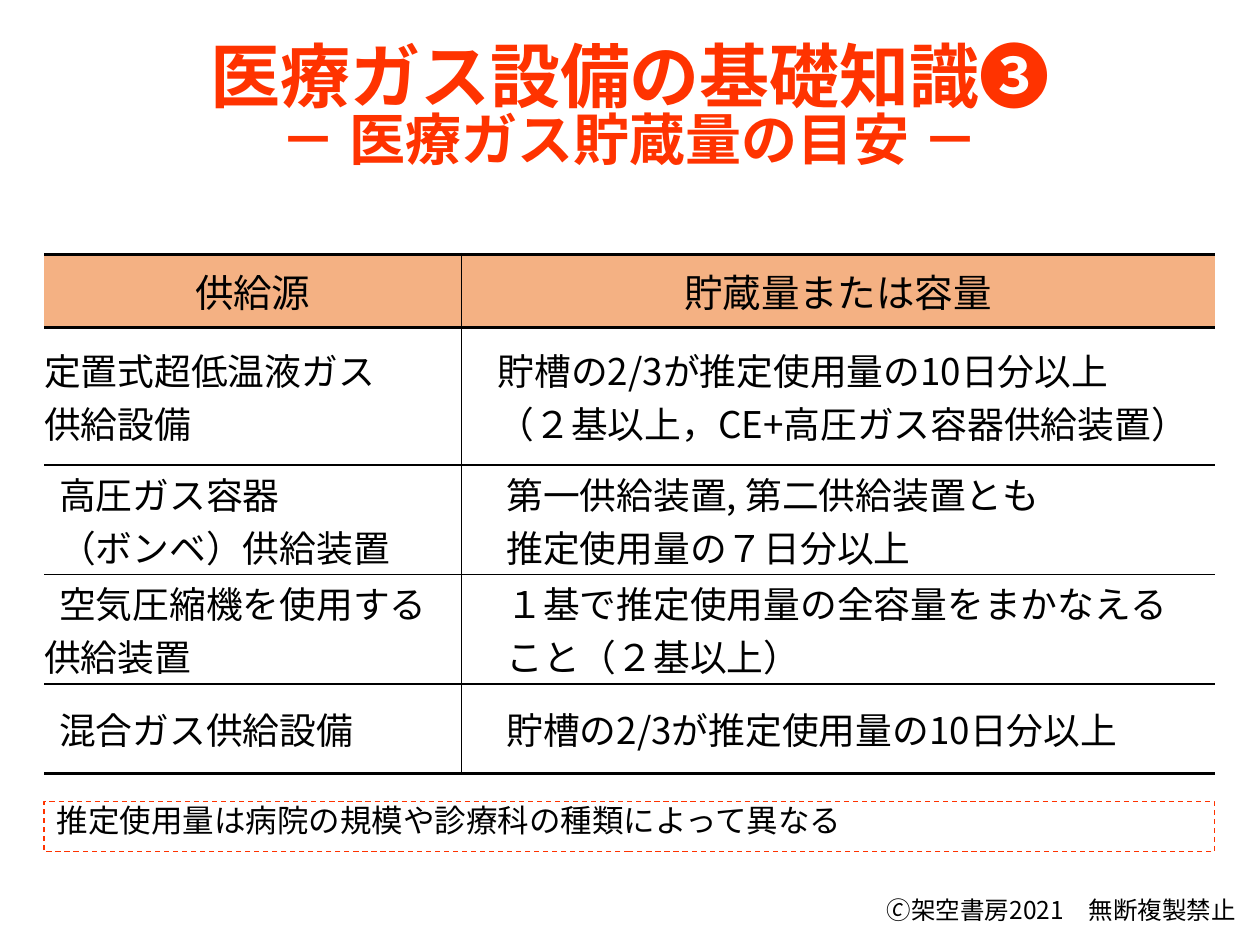
from lxml.etree import SubElement
from pptx import Presentation
from pptx.dml.color import RGBColor
from pptx.enum.dml import MSO_LINE
from pptx.enum.lang import MSO_LANGUAGE_ID
from pptx.enum.shapes import MSO_SHAPE
from pptx.enum.text import MSO_ANCHOR, MSO_AUTO_SIZE, PP_ALIGN
from pptx.oxml.ns import qn
from pptx.util import Inches, Pt

FONT = "Noto Sans CJK JP"
BLACK, RED, ORANGE = "000000", "FF3300", "F4B183"
COLUMNS = [3.31, 5.98]
ROWS = [0.58, 1.09, 0.87, 0.87, 0.71]
RULES = [2.25, 1.5, 1, 1, 1, 2.25]
HEADINGS = ["供給源", "貯蔵量または容量"]
SUPPLIES = [
    ([("定置式超低温液ガス", 0), ("供給設備", 0)],
     [("貯槽の2/3が推定使用量の10日分以上", 0.29),
      ("（２基以上，CE+高圧ガス容器供給装置）", 0.29)]),
    ([("高圧ガス容器", 0.12), ("（ボンベ）供給装置", 0.12)],
     [("第一供給装置, 第二供給装置とも", 0.36),
      ("推定使用量の７日分以上", 0.36)]),
    ([("空気圧縮機を使用する", 0.12), ("供給装置", 0)],
     [("１基で推定使用量の全容量をまかなえる", 0.36),
      ("こと（２基以上）", 0.36)]),
    ([("混合ガス供給設備", 0.12)],
     [("貯槽の2/3が推定使用量の10日分以上", 0.36)]),
]


def color(value):
    return RGBColor.from_string(value)


class SlideBuilder:
    """Holds the style and the current slide, and adds each kind of element."""

    def __init__(self, deck):
        self.slide = deck.slides.add_slide(deck.slide_layouts[5])

    def place(self, shape, left, top, width, height):
        shape.left, shape.top = Inches(left), Inches(top)
        shape.width, shape.height = Inches(width), Inches(height)

    def add_lines(self, frame, lines, align=PP_ALIGN.LEFT, ink=BLACK, bold=False, spacing=0.83):
        for index, (text, size, indent) in enumerate(lines):
            para = frame.paragraphs[0] if index == 0 else frame.add_paragraph()
            para.alignment = align
            para.line_spacing = spacing
            para.space_before = Pt(0)
            if indent:
                properties = para._p.get_or_add_pPr()
                properties.set("marL", str(Inches(indent)))
                properties.set("indent", "0")
            span = para.add_run()
            span.text = text
            span.font.name = FONT
            span.font.size = Pt(size)
            span.font.bold = bold
            span.font.color.rgb = color(ink)
            span.font.language_id = MSO_LANGUAGE_ID.JAPANESE
            SubElement(span._r.get_or_add_rPr(), qn("a:ea"), typeface=FONT)

    def prepare(self, frame):
        frame.word_wrap = True
        frame.auto_size = MSO_AUTO_SIZE.NONE
        frame.vertical_anchor = MSO_ANCHOR.TOP

    def title(self, bounds, lines):
        title = self.slide.shapes.title
        self.place(title, *bounds)
        self.prepare(title.text_frame)
        title.text_frame.margin_top = Inches(0.09)
        self.add_lines(title.text_frame, lines, PP_ALIGN.CENTER, RED, True)

    def text(self, bounds, lines, align):
        box = self.slide.shapes.add_textbox(*map(Inches, bounds))
        self.prepare(box.text_frame)
        self.add_lines(box.text_frame, lines, align)

    def dashed_box(self, bounds, lines):
        box = self.slide.shapes.add_shape(MSO_SHAPE.RECTANGLE, *map(Inches, bounds))
        box.shadow.inherit = False
        box.fill.background()
        box.line.color.rgb = color(RED)
        box.line.width = Pt(0.75)
        box.line.dash_style = MSO_LINE.DASH
        self.prepare(box.text_frame)
        self.add_lines(box.text_frame, lines)

    def border(self, cell, widths):
        properties = cell._tc.get_or_add_tcPr()
        for position, (side, width) in enumerate(widths.items()):
            line = SubElement(properties, qn(f"a:{side}"), w=str(Pt(width)))
            if width:
                fill = SubElement(line, qn("a:solidFill"))
                SubElement(fill, qn("a:srgbClr"), val=BLACK)
            else:
                SubElement(line, qn("a:noFill"))
            properties.remove(line)
            properties.insert(position, line)

    def cell(self, cell, lines, align, fill, widths):
        cell.margin_left = cell.margin_right = cell.margin_top = cell.margin_bottom = 0
        cell.vertical_anchor = MSO_ANCHOR.MIDDLE
        if fill:
            cell.fill.solid()
            cell.fill.fore_color.rgb = color(fill)
        else:
            cell.fill.background()
        self.add_lines(cell.text_frame, lines, align, spacing=1.0)
        self.border(cell, widths)

    def table(self, left, top):
        table = self.slide.shapes.add_table(
            len(ROWS), len(COLUMNS), Inches(left), Inches(top),
            Inches(sum(COLUMNS)), Inches(sum(ROWS))).table
        table.horz_banding = False
        for column, width in zip(table.columns, COLUMNS):
            column.width = Inches(width)
        for row, height in zip(table.rows, ROWS):
            row.height = Inches(height)
        header = [[(heading, 0)] for heading in HEADINGS]
        for row, entries in enumerate([header, *SUPPLIES]):
            size, align, fill = (21, PP_ALIGN.LEFT, None) if row else (22, PP_ALIGN.CENTER, ORANGE)
            for column, entry in enumerate(entries):
                widths = {"lnL": 0.75 * column, "lnR": 0.75 * (1 - column),
                          "lnT": RULES[row], "lnB": RULES[row + 1]}
                lines = [(text, size, indent) for text, indent in entry]
                self.cell(table.cell(row, column), lines, align, fill, widths)


def main():
    deck = Presentation()
    deck.slide_width, deck.slide_height = Inches(10), Inches(7.5)
    page = SlideBuilder(deck)
    page.table(0.35, 2.02)
    page.title((0.09, 0.28, 9.82, 1.31),
               [("医療ガス設備の基礎知識❸", 40, 0), ("－ 医療ガス貯蔵量の目安 －", 32, 0)])
    page.dashed_box((0.35, 6.36, 9.29, 0.4),
                    [("推定使用量は病院の規模や診療科の種類によって異なる", 18, 0)])
    page.text((4.46, 7.09, 5.45, 0.34),
              [("🄫架空書房2021　無断複製禁止", 14, 0)], PP_ALIGN.RIGHT)
    deck.save("out.pptx")


if __name__ == "__main__":
    main()
